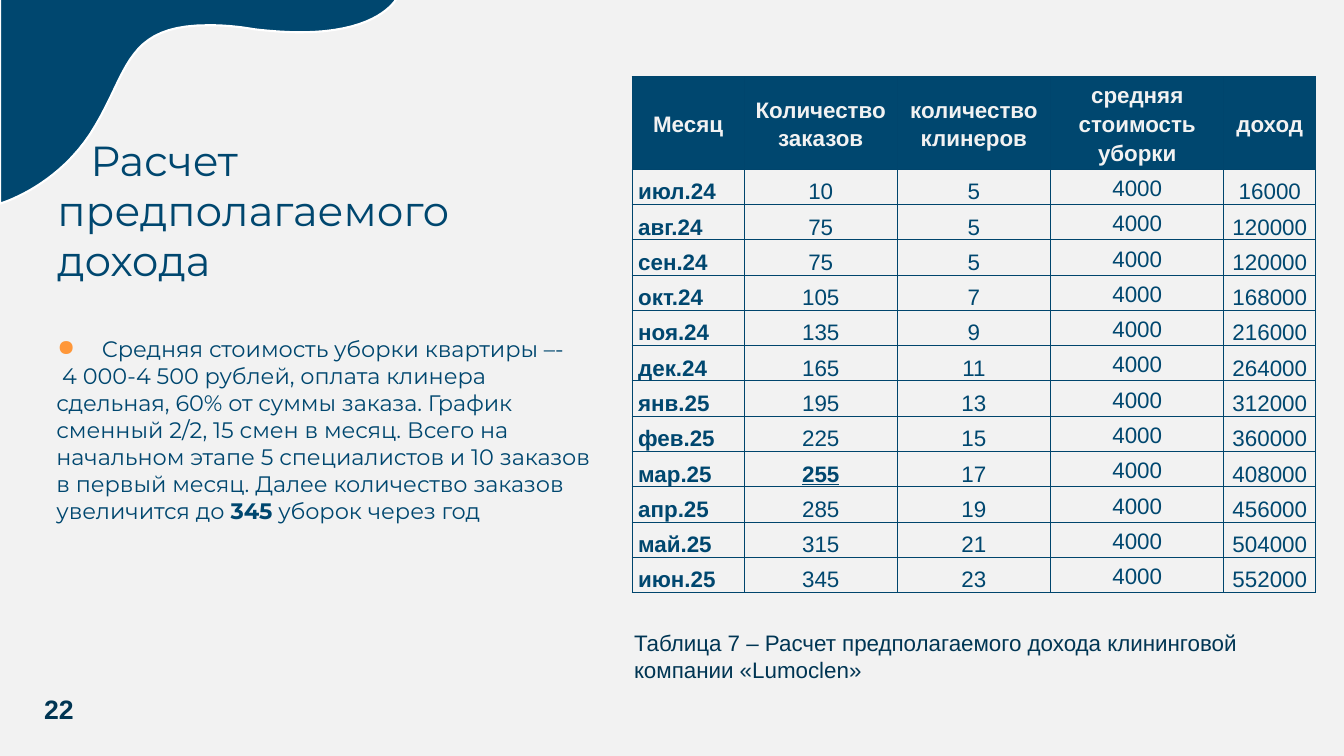
from dataclasses import dataclass
from pptx import Presentation, util as u
from pptx.dml.color import RGBColor
from pptx.enum import shapes, text
from pptx.oxml import parse_xml
from pptx.oxml.ns import nsdecls


@dataclass(frozen=True)
class Theme:
    paper: str = "F2F2F2"
    navy: str = "00476F"
    rule: str = "00456D"
    ink: str = "003553"
    accent: str = "FF9739"
    white: str = "FFFFFF"
    heading: str = "Montserrat"
    plain: str = "Arial"
    title_size: float = 30
    body_size: float = 16
    number_size: float = 19
    rule_width: float = 0.75
    wave_width: float = 1.5


THEME = Theme()
SLIDE_SIZE = (13.33, 7.5)
TITLE = "   Расчет предполагаемого дохода"
COST_LINE = "Средняя стоимость уборки квартиры –-"
PAY_RUNS = [
    (" 4 000-4 500 рублей, оплата клинера сдельная, 60% от суммы заказа. "
     "График сменный 2/2, 15 смен в месяц. Всего на начальном этапе "
     "5 специалистов и 10 заказов в первый месяц. Далее количество заказов "
     "увеличится до ", False),
    ("345", True),
    (" уборок через год", False),
]
HEADERS = ["Месяц", "Количество заказов", "количество клинеров",
           "средняя стоимость уборки", "доход"]
MONTHS = [
    ("июл.24", 10, 5, 4000, 16000),
    ("авг.24", 75, 5, 4000, 120000),
    ("сен.24", 75, 5, 4000, 120000),
    ("окт.24", 105, 7, 4000, 168000),
    ("ноя.24", 135, 9, 4000, 216000),
    ("дек.24", 165, 11, 4000, 264000),
    ("янв.25", 195, 13, 4000, 312000),
    ("фев.25", 225, 15, 4000, 360000),
    ("мар.25", 255, 17, 4000, 408000),
    ("апр.25", 285, 19, 4000, 456000),
    ("май.25", 315, 21, 4000, 504000),
    ("июн.25", 345, 23, 4000, 552000),
]
MARKED_ORDERS = 255
MONTH_COL, COST_COL = 0, 3
CAPTION = "Таблица 7 – Расчет предполагаемого дохода клининговой компании «Lumoclen»"
PAGE = "22"

TITLE_BOX = (0.44, 2.02, 5.43, 0.94)
BODY_BOX = (0.21, 3.2, 5.83, 2.44)
CAPTION_BOX = (6.19, 6.19, 6.93, 0.64)
PAGE_BOX = (0.23, 6.78, 0.71, 0.51)
TABLE_ORIGIN = (6.27, 0.76)
COLUMNS = [1.11, 1.52, 1.52, 1.72, 0.91]
HEADER_ROW, MONTH_ROW = 0.85, 0.35
WAVE_CORNERS = [(0, 2.02), (0, -0.05), (3.96, -0.06)]
WAVE_CURVES = [
    ((3.96, -0.06), (3.83, 0.32), (2.98, 0.32)),
    ((2.85, 0.32), (2.69, 0.31), (2.52, 0.29)),
    ((2.35, 0.26), (2.2, 0.25), (2.07, 0.25)),
    ((1.26, 0.25), (1.28, 0.68), (0.95, 1.24)),
    ((0.6, 1.85), (0, 2.02), (0, 2.02)),
]
CURVE_STEPS = 20


def color(code):
    return RGBColor.from_string(code)


def inches(values):
    return [u.Inches(value) for value in values]


def set_font(font, face, size, code, bold=False):
    font.name, font.size, font.bold = face, u.Pt(size), bold
    font.color.rgb = color(code)


def bezier(start, first, second, end):
    for step in range(1, CURVE_STEPS + 1):
        t = step / CURVE_STEPS
        weights = ((1 - t) ** 3, 3 * t * (1 - t) ** 2, 3 * t * t * (1 - t), t ** 3)
        yield tuple(sum(w * point[axis] for w, point in
                        zip(weights, (start, first, second, end))) for axis in (0, 1))


def paint(shape, fill, line, width):
    shape.shadow.inherit = False
    shape.fill.solid()
    shape.fill.fore_color.rgb = color(fill)
    shape.line.color.rgb = color(line)
    shape.line.width = u.Pt(width)


def add_wave(slide):
    outline = list(WAVE_CORNERS)
    for curve in WAVE_CURVES:
        outline.extend(bezier(outline[-1], *curve))
    points = [inches(point) for point in outline]
    builder = slide.shapes.build_freeform(*points[0], scale=1.0)
    builder.add_line_segments(points[1:], close=True)
    paint(builder.convert_to_shape(), THEME.navy, THEME.white, THEME.wave_width)


def add_text_frame(slide, box, inset=None):
    frame = slide.shapes.add_textbox(*inches(box)).text_frame
    frame.word_wrap = True
    if inset is not None:
        frame.margin_left = frame.margin_right = u.Inches(inset)
        frame.margin_top = frame.margin_bottom = u.Inches(inset)
    return frame


def add_body(slide):
    frame = add_text_frame(slide, BODY_BOX, 0.13)
    cost, pay = frame.paragraphs[0], frame.add_paragraph()
    cost.text = COST_LINE
    set_font(cost.font, THEME.heading, THEME.body_size, THEME.navy)
    for words, bold in PAY_RUNS:
        run = pay.add_run()
        run.text = words
        set_font(run.font, THEME.heading, THEME.body_size, THEME.navy, bold)
    for paragraph, margin, indent in ((cost, 0.67, -0.44), (pay, 0.22, 0)):
        props = paragraph._p.get_or_add_pPr()
        props.set("marL", str(u.Inches(margin)))
        props.set("indent", str(u.Inches(indent)))
    bullet = cost._p.get_or_add_pPr()
    bullet_parts = (f'<a:buClr {nsdecls("a")}><a:srgbClr val="{THEME.accent}"/></a:buClr>',
                    f'<a:buChar {nsdecls("a")} char="●"/>')
    for place, part in enumerate(bullet_parts):
        bullet.insert(place, parse_xml(part))


def add_borders(cell):
    props = cell._tc.get_or_add_tcPr()
    for place, side in enumerate(("lnL", "lnR", "lnT", "lnB")):
        props.insert(place, parse_xml(
            f'<a:{side} {nsdecls("a")} w="{u.Pt(THEME.rule_width)}"><a:solidFill>'
            f'<a:srgbClr val="{THEME.rule}"/></a:solidFill></a:{side}>'))


def fill_cell(cell, value, row, col):
    header = row == 0
    marked = col == 1 and value == MARKED_ORDERS
    cell.margin_left = cell.margin_right = u.Inches(0.06)
    cell.margin_top = cell.margin_bottom = 0
    middle = header or col == COST_COL
    cell.vertical_anchor = text.MSO_ANCHOR.MIDDLE if middle else text.MSO_ANCHOR.BOTTOM
    if header:
        cell.fill.solid()
        cell.fill.fore_color.rgb = color(THEME.navy)
    else:
        cell.fill.background()
    paragraph = cell.text_frame.paragraphs[0]
    paragraph.text = str(value)
    paragraph.line_spacing = 1.15
    left = col == MONTH_COL and not header
    paragraph.alignment = text.PP_ALIGN.LEFT if left else text.PP_ALIGN.CENTER
    set_font(paragraph.font, THEME.plain, THEME.body_size,
             THEME.paper if header else THEME.navy, header or left or marked)
    paragraph.font.underline = marked
    add_borders(cell)


def add_income_table(slide):
    rows = [HEADERS, *MONTHS]
    heights = [HEADER_ROW] + [MONTH_ROW] * len(MONTHS)
    box = inches((*TABLE_ORIGIN, sum(COLUMNS), sum(heights)))
    income = slide.shapes.add_table(len(rows), len(COLUMNS), *box).table
    income.first_row = income.horz_banding = False
    for column, width in zip(income.columns, COLUMNS):
        column.width = u.Inches(width)
    for row, (values, height) in enumerate(zip(rows, heights)):
        income.rows[row].height = u.Inches(height)
        for col, value in enumerate(values):
            fill_cell(income.cell(row, col), value, row, col)


def main():
    deck = Presentation()
    deck.slide_width, deck.slide_height = inches(SLIDE_SIZE)
    slide = deck.slides.add_slide(deck.slide_layouts[6])
    slide.background.fill.solid()
    slide.background.fill.fore_color.rgb = color(THEME.paper)
    add_wave(slide)

    title = add_text_frame(slide, TITLE_BOX, 0.13)
    title.vertical_anchor = text.MSO_ANCHOR.BOTTOM
    title.text = TITLE
    set_font(title.paragraphs[0].font, THEME.heading, THEME.title_size, THEME.navy)
    add_body(slide)
    add_income_table(slide)

    page = slide.shapes.add_shape(shapes.MSO_SHAPE.RECTANGLE, *inches(PAGE_BOX))
    paint(page, THEME.paper, THEME.paper, 2)
    page.text_frame.text = PAGE
    number = page.text_frame.paragraphs[0]
    number.alignment = text.PP_ALIGN.CENTER
    set_font(number.font, THEME.plain, THEME.number_size, THEME.ink, True)

    caption = add_text_frame(slide, CAPTION_BOX)
    caption.text = CAPTION
    set_font(caption.paragraphs[0].font, THEME.plain, THEME.body_size, THEME.ink)
    deck.save("out.pptx")


if __name__ == "__main__":
    main()
